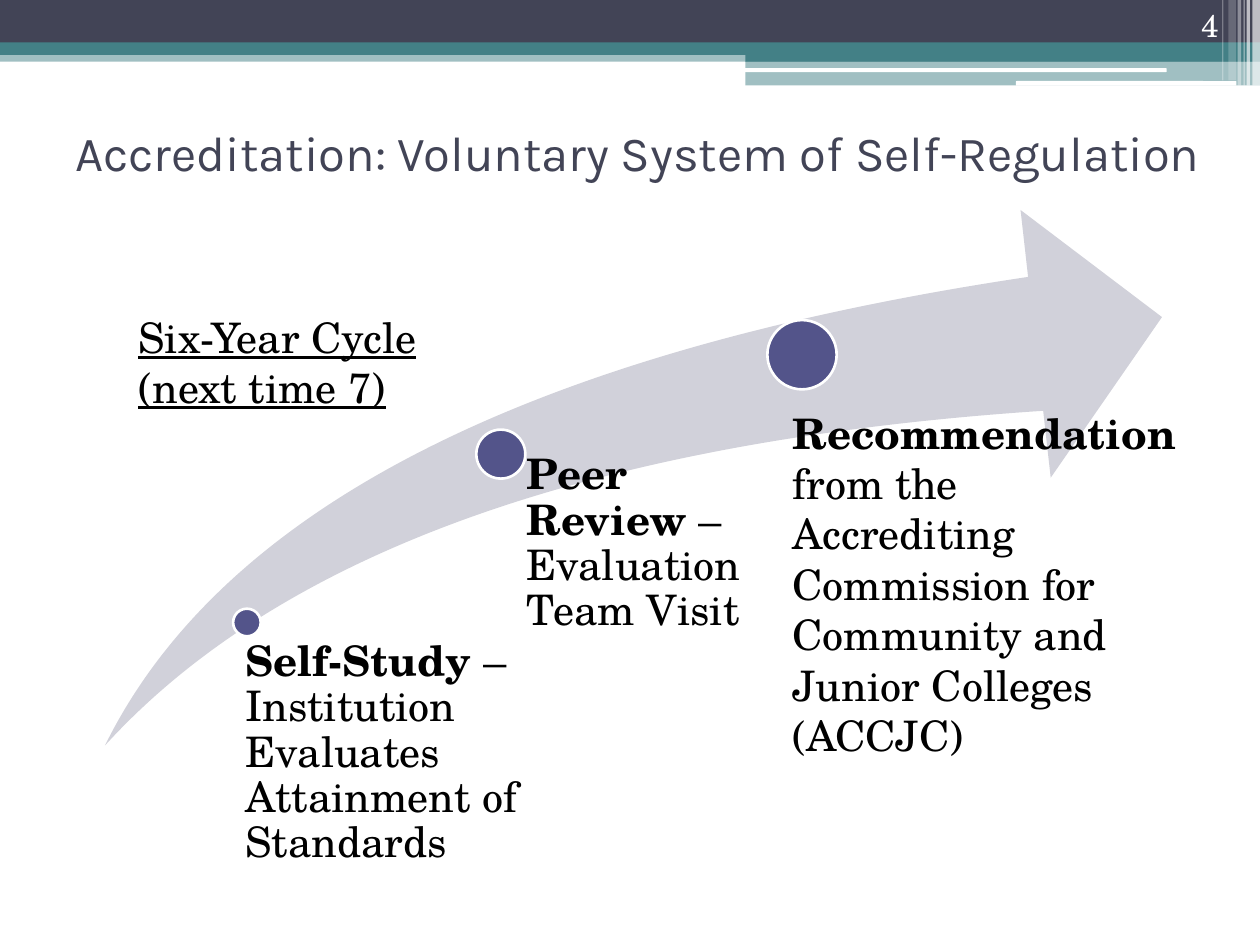
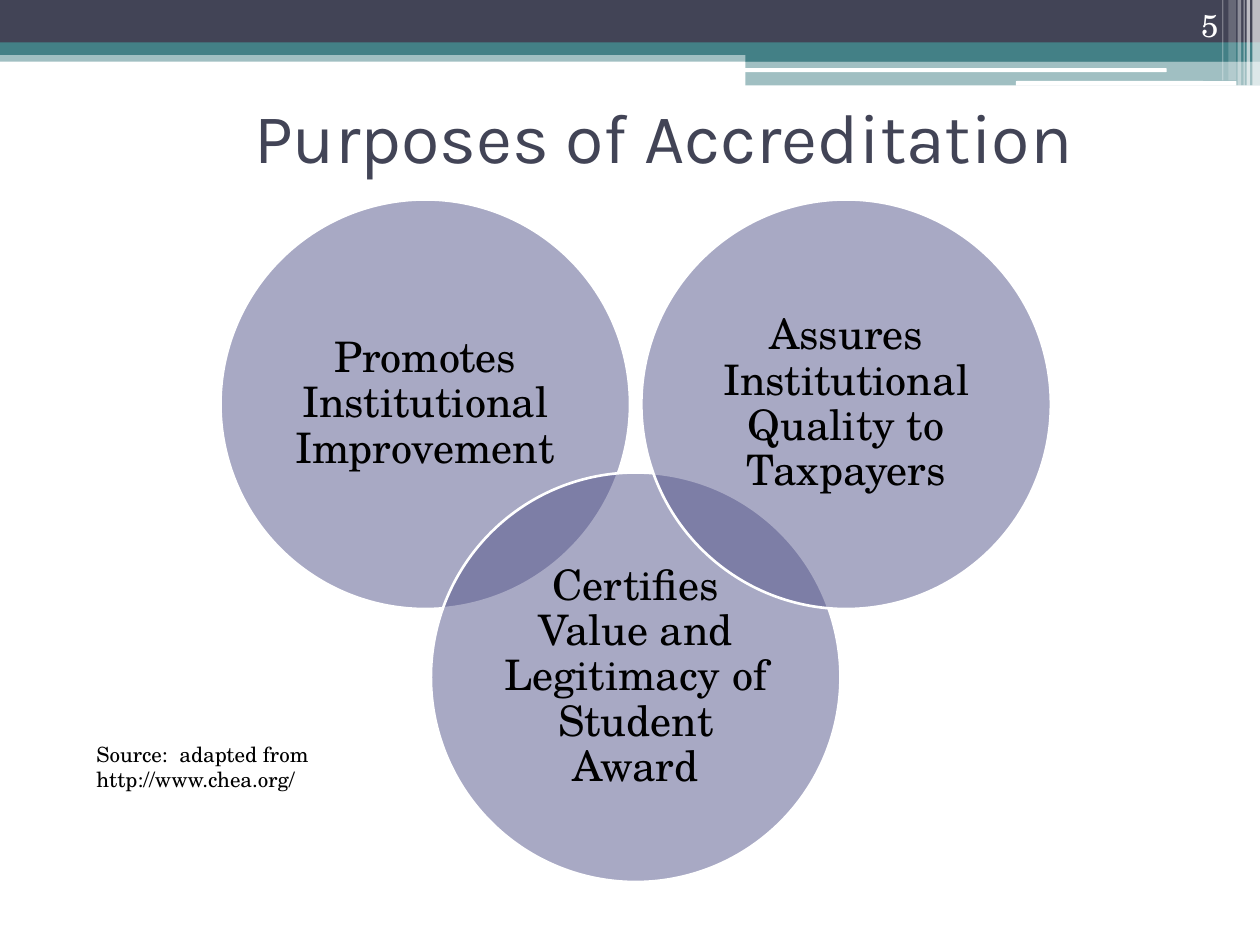
from dataclasses import dataclass

from lxml import etree
from pptx import Presentation
from pptx.dml.color import RGBColor
from pptx.enum import shapes, text
from pptx.oxml import ns
from pptx.util import Pt

RECT = shapes.MSO_SHAPE.RECTANGLE
ROUND = shapes.MSO_SHAPE.ROUNDED_RECTANGLE
OVAL = shapes.MSO_SHAPE.OVAL
SWOOSH = shapes.MSO_SHAPE.SWOOSH_ARROW
LEFT, CENTER, RIGHT = text.PP_ALIGN.LEFT, text.PP_ALIGN.CENTER, text.PP_ALIGN.RIGHT
TOP, MIDDLE, BOTTOM = text.MSO_ANCHOR.TOP, text.MSO_ANCHOR.MIDDLE, text.MSO_ANCHOR.BOTTOM

NAVY, TEAL, PURPLE, LILAC = "424456", "438086", "53548A", "D1D1DA"
WHITE, BLACK = "FFFFFF", "000000"
HEADING_FONT, BODY_FONT = "Karla", "TeX Gyre Schola"
PAGE_WIDTH, PAGE_HEIGHT = 720, 540


@dataclass(frozen=True)
class Area:
    left: float
    top: float
    width: float
    height: float

    def lengths(self) -> tuple:
        return Pt(self.left), Pt(self.top), Pt(self.width), Pt(self.height)

    def shrink(self, margin: float) -> "Area":
        return Area(self.left + margin, self.top + margin,
                    self.width - 2 * margin, self.height - 2 * margin)


@dataclass(frozen=True)
class Band:
    area: Area
    color: str
    opacity: int = 100
    kind: int = RECT


@dataclass(frozen=True)
class Milestone:
    dot: Area
    label: Area
    indent: float
    lead: str
    detail: str
    spacing: float


@dataclass(frozen=True)
class Purpose:
    column: int
    top: float
    wording: str


BANDS = [
    Band(Area(0, 28.8, PAGE_WIDTH, 6.5), TEAL, 50),
    Band(Area(0, 0, PAGE_WIDTH, 24.5), NAVY),
    Band(Area(0, 24.2, PAGE_WIDTH, 7.2), TEAL),
    Band(Area(426, 28, 294, 7.2), TEAL),
    Band(Area(426, 34.9, 294, 14), TEAL, 50),
    Band(Area(425.5, 39, 241.2, 2.2), WHITE, kind=ROUND),
    Band(Area(580.5, 46.3, 126, 2.7), WHITE, kind=ROUND),
    Band(Area(715.7, 0, 4.3, 48.9), WHITE, 65),
    Band(Area(712.3, 0, 2, 48.9), WHITE, 65),
    Band(Area(710.6, 0, 0.7, 48.9), WHITE, 60),
    Band(Area(707.2, 0, 2, 48.9), WHITE, 40),
    Band(Area(702, 0, 4.3, 46), WHITE, 20),
    Band(Area(698.4, 0, 0.7, 46), WHITE, 30),
]

MILESTONES = [
    Milestone(Area(133.2, 347.8, 15.8, 15.8), Area(131.8, 365.8, 177, 133),
              8.6, "Self-Study ",
              "– Institution Evaluates Attainment of Standards", 0.9),
    Milestone(Area(272.2, 245.5, 28, 28), Area(285.8, 259.2, 145, 205),
              15.1, "Peer Review ", "– Evaluation Team Visit", 0.9),
    Milestone(Area(438.5, 182.9, 39.6, 39.6), Area(432, 232.6, 246, 234),
              20.9, "Recommendation",
              " from the Accrediting Commission for Community and Junior Colleges (ACCJC)", 1),
]

PURPOSES = [
    Purpose(0, 114, "Promotes Institutional Improvement"),
    Purpose(1, 270, "Certifies Value and Legitimacy of Student Award"),
    Purpose(2, 114, "Assures Institutional Quality to Taxpayers"),
]


def rgb(color: str) -> RGBColor:
    return RGBColor.from_string(color)


def add_figure(page, kind: int, area: Area, color: str, opacity: int = 100,
               outline: str = ""):
    figure = page.shapes.add_shape(kind, *area.lengths())
    figure.shadow.inherit = False
    figure.fill.solid()
    figure.fill.fore_color.rgb = rgb(color)
    if opacity < 100:
        tone = figure.fill._xPr.find(ns.qn("a:solidFill"))[0]
        etree.SubElement(tone, ns.qn("a:alpha"), val=str(opacity * 1000))
    if outline:
        figure.line.color.rgb = rgb(outline)
        figure.line.width = Pt(1.5)
    else:
        figure.line.fill.background()
    return figure


def add_text(page, area: Area, wording: str, *, lead: str = "", size: float = 24,
             font: str = BODY_FONT, color: str = BLACK, underline: bool = False,
             align: int = LEFT, anchor: int = TOP, spacing: float = 1,
             margins: tuple = (7.2, 3.6, 7.2, 3.6)):
    box = page.shapes.add_textbox(*area.lengths())
    frame = box.text_frame
    frame.word_wrap = True
    frame.vertical_anchor = anchor
    (frame.margin_left, frame.margin_top,
     frame.margin_right, frame.margin_bottom) = map(Pt, margins)
    para = frame.paragraphs[0]
    para.alignment = align
    para.line_spacing = spacing
    for part, bold in ((lead, True), (wording, False)):
        if part:
            span = para.add_run()
            span.text = part
            span.font.name = font
            span.font.size = Pt(size)
            span.font.bold = bold
            span.font.underline = underline
            span.font.color.rgb = rgb(color)
    return box


def add_page(deck, number: int, title: str, title_area: Area, title_size: float):
    page = deck.slides.add_slide(deck.slide_layouts[6])
    for band in BANDS:
        add_figure(page, band.kind, band.area, band.color, band.opacity)
    add_text(page, title_area, title, size=title_size, font=HEADING_FONT,
             color=NAVY, anchor=MIDDLE)
    add_text(page, Area(643.7, 0, 59.8, 28.8), str(number), size=18,
             color=WHITE, align=RIGHT, anchor=BOTTOM)
    return page


def add_milestone(page, milestone: Milestone) -> None:
    add_figure(page, OVAL, milestone.dot, PURPLE, outline=WHITE)
    add_text(page, milestone.label, milestone.detail, lead=milestone.lead,
             spacing=milestone.spacing, margins=(milestone.indent, 0, 0, 0))


def add_purpose(page, purpose: Purpose) -> None:
    circle = Area(126 + 120.25 * purpose.column, purpose.top, 234, 234)
    add_figure(page, OVAL, circle, PURPLE, 50, WHITE)
    add_text(page, circle.shrink(34.2), purpose.wording, align=CENTER,
             anchor=MIDDLE, spacing=0.9, margins=(7.2,) * 4)


def build_cycle(deck) -> None:
    page = add_page(deck, 4, "Accreditation: Voluntary System of Self-Regulation",
                    Area(36, 44.6, 667.4, 84.2), 28)
    arrow = add_figure(page, SWOOSH, Area(60, 120, 604, 306), LILAC)
    arrow.adjustments[0] = arrow.adjustments[1] = 0.25
    for milestone in MILESTONES:
        add_milestone(page, milestone)
    add_text(page, Area(72, 174.2, 185.8, 65.5), "Six-Year Cycle (next time 7)",
             underline=True)


def build_purposes(deck) -> None:
    page = add_page(deck, 5, "Purposes of Accreditation",
                    Area(138.2, 47.5, 576, 59.8), 40)
    for purpose in PURPOSES:
        add_purpose(page, purpose)
    add_text(page, Area(48, 420, 156, 36),
             "Source:  adapted from http://www.chea.org/", size=12)


def main() -> None:
    deck = Presentation()
    deck.slide_width, deck.slide_height = Pt(PAGE_WIDTH), Pt(PAGE_HEIGHT)
    build_cycle(deck)
    build_purposes(deck)
    deck.save("out.pptx")


if __name__ == "__main__":
    main()
